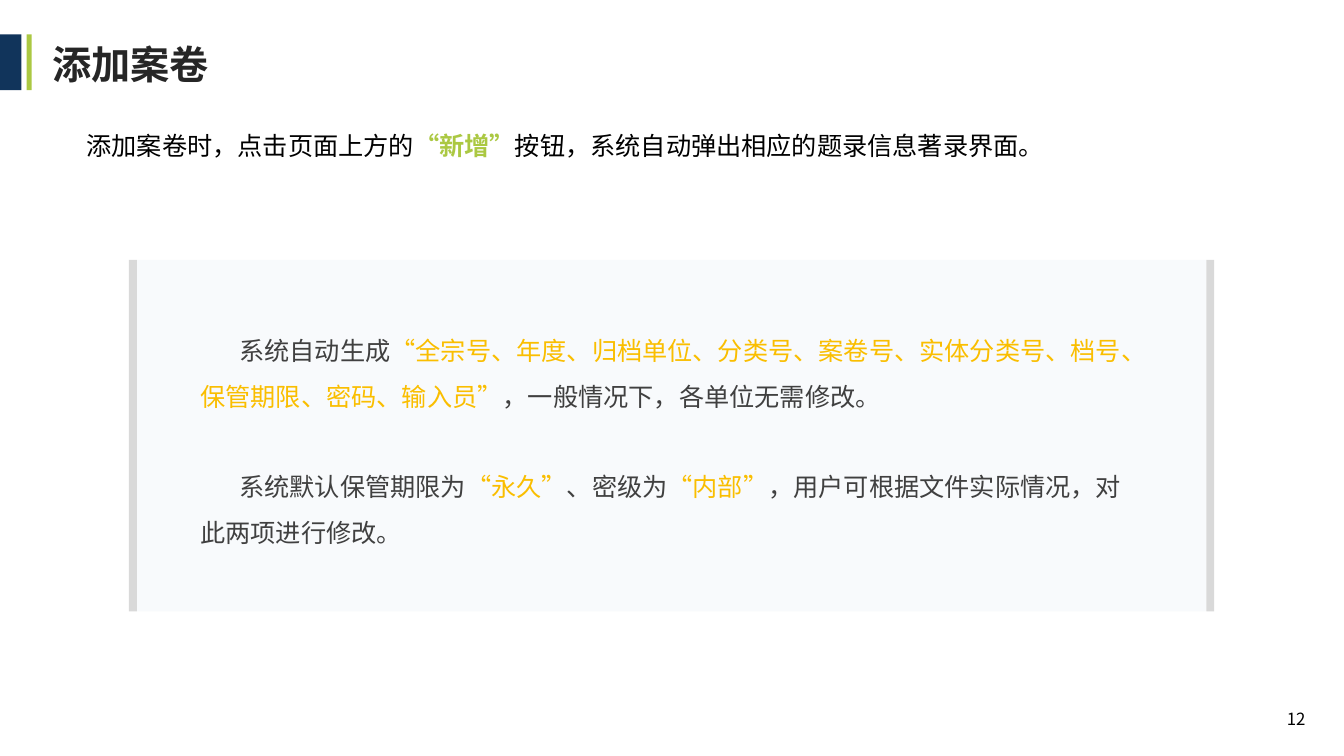
"""Build the slide that explains how to add an archive file."""
from lxml import etree
from pptx import Presentation
from pptx.dml.color import RGBColor
from pptx.enum.lang import MSO_LANGUAGE_ID
from pptx.enum.shapes import MSO_SHAPE
from pptx.enum.text import MSO_ANCHOR, MSO_AUTO_SIZE, PP_ALIGN
from pptx.oxml.ns import qn
from pptx.util import Cm, Pt

NAVY = RGBColor(0x11, 0x34, 0x5B)
GREEN = RGBColor(0xAB, 0xC8, 0x42)
AMBER = RGBColor(0xFA, 0xBE, 0x00)
BLUE = RGBColor(0x4F, 0x81, 0xBD)
SILVER = RGBColor(0xD9, 0xD9, 0xD9)
GRAY = RGBColor(0x40, 0x40, 0x40)
INK = RGBColor(0x26, 0x26, 0x26)
BLACK = RGBColor(0x00, 0x00, 0x00)

RECTANGLE = MSO_SHAPE.RECTANGLE
MIDDLE, TOP = MSO_ANCHOR.MIDDLE, MSO_ANCHOR.TOP
LEFT, RIGHT = PP_ALIGN.LEFT, PP_ALIGN.RIGHT
NO_AUTOFIT = MSO_AUTO_SIZE.NONE
CHINESE = MSO_LANGUAGE_ID.SIMPLIFIED_CHINESE
TITLE_ONLY = 5


class SlideBuilder:
    """Hold the type style and the slide, and draw its elements."""

    typeface = "Noto Sans CJK SC"
    body_size = 18
    line_spacing = 1.5

    def __init__(self, presentation):
        """Add a slide with a title placeholder."""
        self.slide = presentation.slides.add_slide(presentation.slide_layouts[TITLE_ONLY])

    def bar(self, left, top, width, height, color, alpha=None):
        """Draw a plain rectangle, with an optional opacity in percent."""
        bar = self.slide.shapes.add_shape(
            RECTANGLE, Cm(left), Cm(top), Cm(width), Cm(height))
        bar.shadow.inherit = False
        bar.line.fill.background()
        bar.fill.solid()
        bar.fill.fore_color.rgb = color
        if alpha is not None:
            rgb = bar._element.spPr.find(".//" + qn("a:srgbClr"))
            etree.SubElement(rgb, qn("a:alpha")).set("val", str(alpha * 1000))

    def add_parts(self, paragraph, parts, size, align=LEFT):
        """Fill a paragraph with (wording, color, bold) parts."""
        paragraph.alignment = align
        for wording, color, bold in parts:
            run = paragraph.add_run()
            run.text = wording
            font = run.font
            font.size, font.bold, font.name = Pt(size), bold, self.typeface
            font.color.rgb = color
            font.language_id = CHINESE
            east_asian = etree.SubElement(font._element, qn("a:ea"))
            east_asian.set("typeface", self.typeface)

    def title(self, left, top, width, height, wording):
        """Move and format the title placeholder."""
        title = self.slide.shapes.title
        title.left, title.top, title.width, title.height = map(Cm, (left, top, width, height))
        frame = title.text_frame
        frame.auto_size = NO_AUTOFIT
        frame.vertical_anchor = MIDDLE
        self.add_parts(frame.paragraphs[0], [(wording, INK, True)], 28)

    def text_frame(self, left, top, width, height, anchor=TOP):
        """Add a wrapping text box and return its frame."""
        frame = self.slide.shapes.add_textbox(
            Cm(left), Cm(top), Cm(width), Cm(height)).text_frame
        frame.word_wrap = True
        frame.vertical_anchor = anchor
        return frame

    def body(self, left, top, width, height, paragraphs, indent=0.0, gap=0.0):
        """Add body paragraphs with a first-line indent and a gap between them."""
        frame = self.text_frame(left, top, width, height)
        for index, parts in enumerate(paragraphs):
            paragraph = frame.add_paragraph() if index else frame.paragraphs[0]
            paragraph.line_spacing = self.line_spacing
            paragraph.space_before = Pt(gap if index else 0)
            if indent:
                paragraph._p.get_or_add_pPr().set("indent", str(Cm(indent)))
            self.add_parts(paragraph, parts, self.body_size)

    def page_number(self, left, top, width, height, number):
        """Add the page number at the right."""
        frame = self.text_frame(left, top, width, height, MIDDLE)
        self.add_parts(frame.paragraphs[0], [(number, BLACK, False)], 12, RIGHT)


def main():
    """Draw the slide and save it."""
    presentation = Presentation()
    presentation.slide_width, presentation.slide_height = Cm(33.87), Cm(19.05)
    builder = SlideBuilder(presentation)

    builder.bar(0, 0.87, 0.54, 1.4, NAVY)
    builder.bar(0.67, 0.87, 0.13, 1.4, GREEN)
    builder.title(1.07, 0.69, 29.34, 1.85, "添加案卷")
    builder.page_number(30.94, 17.6, 2.21, 1.02, "12")

    builder.body(1.93, 2.79, 30, 1.4, [[
        ("添加案卷时，点击页面上方的", BLACK, False),
        ("“新增”", GREEN, True),
        ("按钮，系统自动弹出相应的题录信息著录界面。", BLACK, False),
    ]])

    panel_left, panel_top, panel_width, panel_height = 3.45, 6.55, 26.95, 8.86
    edge = 0.2
    builder.bar(panel_left, panel_top, panel_width, panel_height, BLUE, alpha=4)
    for edge_left in (panel_left - edge, panel_left + panel_width):
        builder.bar(edge_left, panel_top, edge, panel_height, SILVER)

    generated_fields = [
        ("系统自动生成", GRAY, False),
        ("“全宗号、年度、归档单位、分类号、案卷号、实体分类号、档号、"
         "保管期限、密码、输入员”", AMBER, False),
        ("，一般情况下，各单位无需修改。", GRAY, False),
    ]
    default_values = [
        ("系统默认保管期限为", GRAY, False),
        ("“永久”", AMBER, False),
        ("、密级为", GRAY, False),
        ("“内部”", AMBER, False),
        ("，用户可根据文件实际情况，对此两项进行修改。", GRAY, False),
    ]
    builder.body(4.8, 7.95, 24.28, 6.02, [generated_fields, default_values],
                 indent=0.98, gap=32.5)

    presentation.save("out.pptx")


if __name__ == "__main__":
    main()
